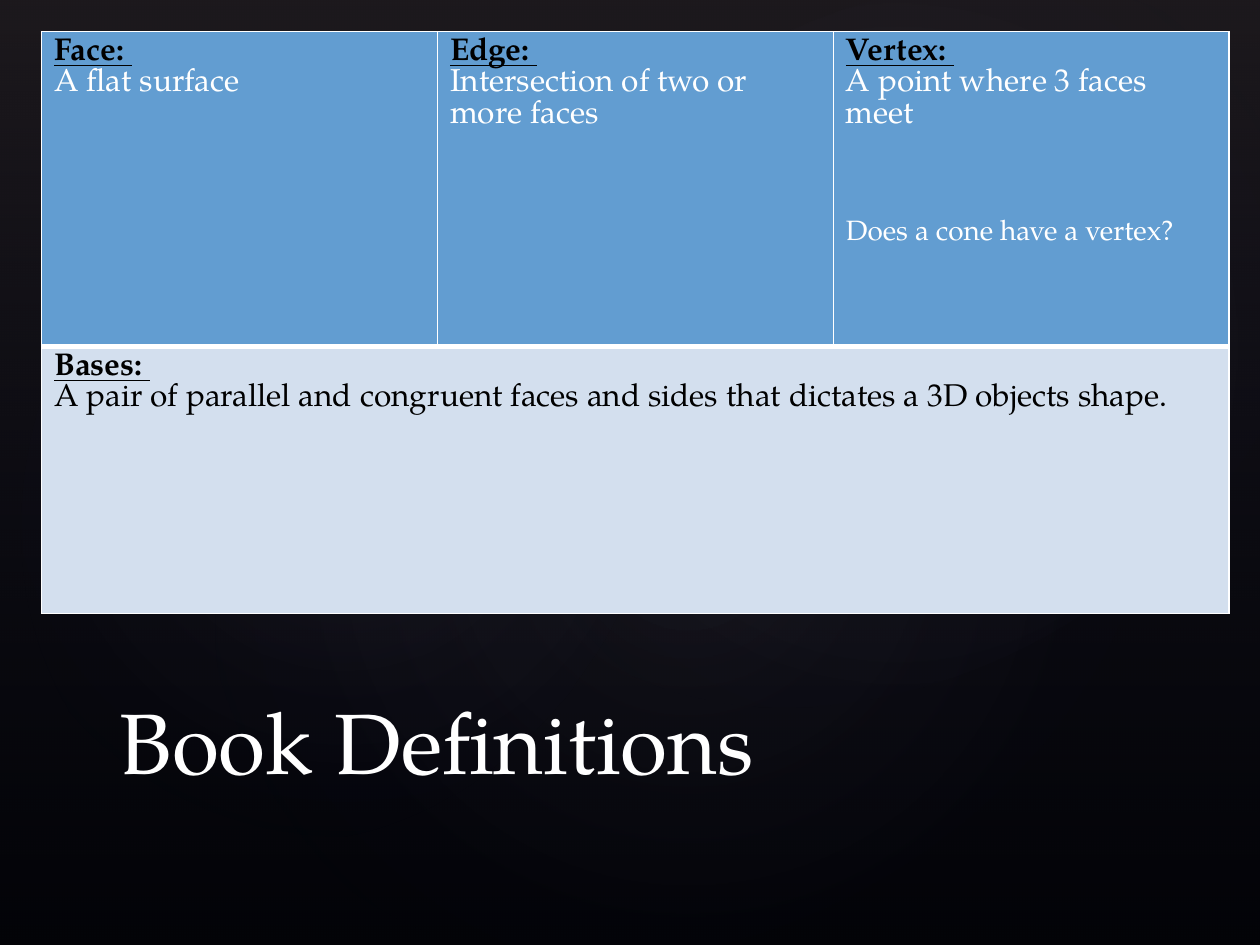
from lxml.etree import SubElement
from pptx import Presentation
from pptx.dml.color import RGBColor
from pptx.enum.shapes import MSO_SHAPE as SHAPE
from pptx.enum.text import MSO_ANCHOR as ANCHOR, MSO_AUTO_SIZE as AUTO, PP_ALIGN as ALIGN
from pptx.oxml import parse_xml
from pptx.oxml.ns import nsdecls, qn
from pptx.util import Cm, Pt

rgb = RGBColor.from_string
FONT = "TeX Gyre Pagella"
WHITE, BLACK = "FFFFFF", "000000"


def write(p, text, size=18, color=WHITE, bold=False, underline=False, before=0):
    p.alignment = ALIGN.LEFT
    p.space_before = Pt(before)
    r = p.add_run()
    r.text = text
    r.font.name, r.font.size = FONT, Pt(size)
    r.font.bold, r.font.underline = bold, underline
    r.font.color.rgb = rgb(color)


def add_glow(shapes, kind, box, stops, direction, rotation=0):
    """Add a shape with a transparent gradient; stops are (position, colour, alpha) in %."""
    sp = shapes.add_shape(kind, *[Cm(v) for v in box])
    sp.rotation = rotation
    sp.shadow.inherit = False
    sp.line.fill.background()
    gs = "".join(
        f'<a:gs pos="{pos * 1000}"><a:srgbClr val="{color}">'
        f'<a:alpha val="{alpha * 1000}"/></a:srgbClr></a:gs>'
        for pos, color, alpha in stops)
    grad = parse_xml(f'<a:gradFill {nsdecls("a")} rotWithShape="1">'
                     f'<a:gsLst>{gs}</a:gsLst>{direction}</a:gradFill>')
    sp._element.spPr.find(qn("a:prstGeom")).addnext(grad)


prs = Presentation()
prs.slide_width, prs.slide_height = Cm(25.4), Cm(19.05)
s = prs.slides.add_slide(prs.slide_layouts[5])

# Background: dark vertical fade and three faint glows
s.background.fill.solid()
s.background.fill.fore_color.rgb = rgb(BLACK)
add_glow(s.shapes, SHAPE.RECTANGLE, (0, 0, 25.4, 19.05),
         [(0, "504652", 36), (100, "242852", 10)], '<a:lin ang="5400000" scaled="0"/>')
radial = ('<a:path path="circle"><a:fillToRect l="50000" t="50000" '
          'r="50000" b="50000"/></a:path>')
for box, rotation, alpha in [((3.81, 2.9, 20.12, 15.85), 328.7, 7),
                             ((-0.76, 3.25, 15.39, 12.45), 294.3, 8),
                             ((9.09, 0.33, 18.01, 13.21), 328.7, 8)]:
    add_glow(s.shapes, SHAPE.OVAL, box,
             [(0, "C4BCC6", alpha), (58, "242852", 0)], radial, rotation)

# Definitions table
tbl = s.shapes.add_table(2, 3, Cm(0.84), Cm(0.64), Cm(23.93), Cm(11.73)).table
for col in tbl.columns:
    col.width = Cm(7.98)
tbl.rows[0].height, tbl.rows[1].height = Cm(6.35), Cm(5.38)
tbl.cell(1, 0).merge(tbl.cell(1, 2))

# Cell fills and white borders, thicker between the rows
for row, fill in enumerate(["629DD1", "D3DFEE"]):
    widths = {"L": 1, "R": 1, "T": 3 if row else 1, "B": 1 if row else 3}
    for cell in tbl.rows[row].cells:
        tcPr = cell._tc.get_or_add_tcPr()
        for side, width in widths.items():
            ln = SubElement(tcPr, qn(f"a:ln{side}"), w=str(Pt(width)))
            SubElement(SubElement(ln, qn("a:solidFill")), qn("a:srgbClr"), val=WHITE)
        cell.fill.solid()
        cell.fill.fore_color.rgb = rgb(fill)

# Terms and definitions
for row, col, term, meaning, color in [
        (0, 0, "Face: ", "A flat surface", WHITE),
        (0, 1, "Edge: ", "Intersection of two or more faces", WHITE),
        (0, 2, "Vertex: ", "A point where 3 faces meet", WHITE),
        (1, 0, "Bases: ", "A pair of parallel and congruent faces and sides "
                          "that dictates a 3D objects shape.", BLACK)]:
    tf = tbl.cell(row, col).text_frame
    write(tf.paragraphs[0], term, color=BLACK, bold=True, underline=True)
    write(tf.add_paragraph(), meaning, color=color)
write(tbl.cell(0, 2).text_frame.add_paragraph(), "Does a cone have a vertex?",
      size=16, before=50)

# Title, brought in front of the background
title = s.shapes.title
title.left, title.top, title.width, title.height = Cm(2.16), Cm(13.54), Cm(20.96), Cm(2.54)
tf = title.text_frame
tf.auto_size, tf.vertical_anchor = AUTO.NONE, ANCHOR.BOTTOM
write(tf.paragraphs[0], "Book Definitions", size=49)
title._element.getparent().append(title._element)

prs.save("out.pptx")
